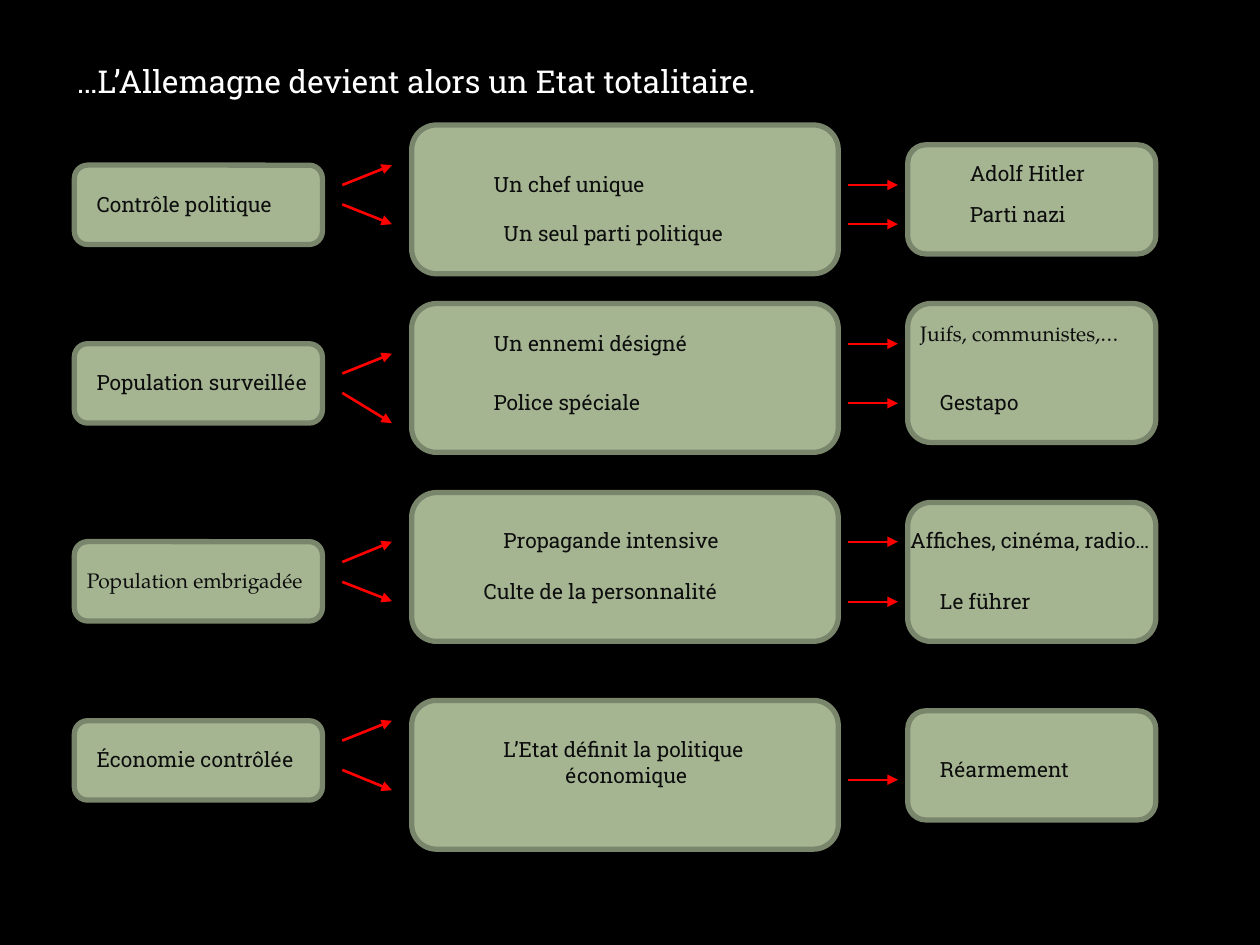
from dataclasses import dataclass

from lxml import etree
from pptx import Presentation
from pptx.dml.color import RGBColor
from pptx.enum.shapes import MSO_CONNECTOR, MSO_SHAPE
from pptx.enum.text import MSO_ANCHOR, MSO_AUTO_SIZE
from pptx.oxml.ns import qn
from pptx.util import Cm, Pt

ROUNDED = MSO_SHAPE.ROUNDED_RECTANGLE
STRAIGHT = MSO_CONNECTOR.STRAIGHT
FRAME_FORMAT = {
    "word_wrap": True,
    "auto_size": MSO_AUTO_SIZE.SHAPE_TO_FIT_TEXT,
    "vertical_anchor": MSO_ANCHOR.TOP,
}


@dataclass(frozen=True)
class Theme:
    background: RGBColor = RGBColor(0, 0, 0)
    panel: RGBColor = RGBColor(0xA5, 0xB5, 0x92)
    border: RGBColor = RGBColor(0x7A, 0x86, 0x6C)
    arrow: RGBColor = RGBColor(0xFF, 0, 0)
    title: RGBColor = RGBColor(0xFF, 0xFF, 0xFF)
    body: RGBColor = RGBColor(0x0D, 0x0D, 0x0D)
    slab: str = "Roboto Slab"
    serif: str = "TeX Gyre Pagella"
    title_size: int = 18
    body_size: int = 12
    border_width: float = 3
    branch_width: float = 1.5
    link_width: float = 1.25


THEME = Theme()

# Columns in cm: left edge and width; arrows: start and end
CAUSE_X, MEANS_X, EXAMPLE_X = (1.5, 5), (8.3, 8.6), (18.3, 5)
BRANCH_X, LINK_X = (6.9, 7.9), (17.1, 18.1)
CAUSE_HEIGHT, MEANS_HEIGHT = 1.6, 3
LABEL_OFFSET = 0.4
LABEL_HEIGHT = 0.77
SECOND_LINE_INDENT = 1.25

# One entry per row; boxes are (top, height), texts are
# (text, left, top, width[, font]), branches are (start y, end y)
ROWS = [
    {
        "cause": (3.33, "Contrôle politique", 1.7, 4.6),
        "means_top": 2.52,
        "example_box": (2.92, 2.2),
        "branches": [(3.73, 3.33), (4.12, 4.52)],
        "links": [3.73, 4.52],
        "texts": [
            ("Un chef unique", 9.7, 3.33, 6),
            ("Un seul parti politique", 9.9, 4.32, 7.2),
            ("Adolf Hitler", 19.3, 3.12, 3),
            ("Parti nazi", 19.3, 3.93, 3.2),
        ],
    },
    {
        "cause": (6.93, "Population surveillée", 1.7, 5.2),
        "means_top": 6.12,
        "example_box": (6.12, 2.8),
        "branches": [(7.53, 7.13), (7.92, 8.53)],
        "links": [6.93, 8.13],
        "texts": [
            ("Un ennemi désigné", 9.7, 6.53, 5.4),
            ("Police spéciale", 9.7, 7.73, 5.8),
            ("Juifs, communistes,…", 18.3, 6.33, 5.4, THEME.serif),
            ("Gestapo", 18.7, 7.73, 3.8),
        ],
    },
    {
        "cause": (10.92, "Population embrigadée", 1.5, 5.8, THEME.serif),
        "means_top": 9.93,
        "example_box": (10.13, 2.8),
        "branches": [(11.33, 10.92), (11.73, 12.12)],
        "links": [10.92, 12.13],
        "texts": [
            ("Propagande intensive", 9.9, 10.52, 5.2),
            ("Culte de la personnalité", 9.5, 11.53, 7.6),
            ("Affiches, cinéma, radio…", 18.1, 10.52, 5.4),
            ("Le führer", 18.7, 11.73, 4),
        ],
    },
    {
        "cause": (14.53, "Économie contrôlée", 1.7, 5.4),
        "means_top": 14.12,
        "example_box": (14.33, 2.2),
        "branches": [(14.93, 14.53), (15.52, 15.93)],
        "links": [15.72],
        "texts": [
            ("L’Etat définit la politique\néconomique", 9.9, 14.73, 5.6),
            ("Réarmement", 18.7, 15.12, 4.8),
        ],
    },
]


def set_attributes(target, values):
    for name, value in values.items():
        setattr(target, name, value)


def add_panel(slide, column, top, height):
    left, width = column
    panel = slide.shapes.add_shape(ROUNDED, Cm(left), Cm(top), Cm(width), Cm(height))
    panel.shadow.inherit = False
    panel.fill.solid()
    panel.fill.fore_color.rgb = THEME.panel
    panel.line.color.rgb = THEME.border
    panel.line.width = Pt(THEME.border_width)


def add_text(slide, text, left, top, width, font=THEME.slab,
             size=THEME.body_size, color=THEME.body, height=LABEL_HEIGHT):
    lines = text.split("\n")
    label = slide.shapes.add_textbox(
        Cm(left), Cm(top), Cm(width), Cm(height + 0.5 * (len(lines) - 1)))
    frame = label.text_frame
    set_attributes(frame, FRAME_FORMAT)
    frame.text = text
    for position, paragraph in enumerate(frame.paragraphs):
        run_font = paragraph.runs[0].font
        set_attributes(run_font, {"name": font, "size": Pt(size)})
        run_font.color.rgb = color
        if position:
            indent = Cm(SECOND_LINE_INDENT)
            paragraph._p.get_or_add_pPr().set("marL", str(indent))


def add_arrow(slide, span, start_y, end_y, width):
    start_x, end_x = span
    arrow = slide.shapes.add_connector(
        STRAIGHT, Cm(start_x), Cm(start_y), Cm(end_x), Cm(end_y))
    arrow.line.color.rgb = THEME.arrow
    arrow.line.width = Pt(width)
    etree.SubElement(arrow.line._get_or_add_ln(), qn("a:tailEnd"), type="triangle")
    etree.SubElement(arrow._element.spPr, qn("a:effectLst"))


def add_row(slide, row):
    # Boxes of the three columns
    cause_top, cause, cause_left, *cause_style = row["cause"]
    add_panel(slide, CAUSE_X, cause_top, CAUSE_HEIGHT)
    add_panel(slide, MEANS_X, row["means_top"], MEANS_HEIGHT)
    add_panel(slide, EXAMPLE_X, *row["example_box"])

    # Arrows from cause to means, then from means to examples
    for start_y, end_y in row["branches"]:
        add_arrow(slide, BRANCH_X, start_y, end_y, THEME.branch_width)
    for y in row["links"]:
        add_arrow(slide, LINK_X, y, y, THEME.link_width)

    # Wording
    add_text(slide, cause, cause_left, cause_top + LABEL_OFFSET, *cause_style)
    for entry in row["texts"]:
        add_text(slide, *entry)


def main():
    deck = Presentation()
    set_attributes(deck, {"slide_width": Cm(25.4), "slide_height": Cm(19.05)})
    slide = deck.slides.add_slide(deck.slide_layouts[6])
    slide.background.fill.solid()
    slide.background.fill.fore_color.rgb = THEME.background

    add_text(slide, "…L’Allemagne devient alors un Etat totalitaire.",
             1.3, 1.12, 21.8, size=THEME.title_size, color=THEME.title, height=1.02)
    for row in ROWS:
        add_row(slide, row)

    deck.save("out.pptx")


if __name__ == "__main__":
    main()
